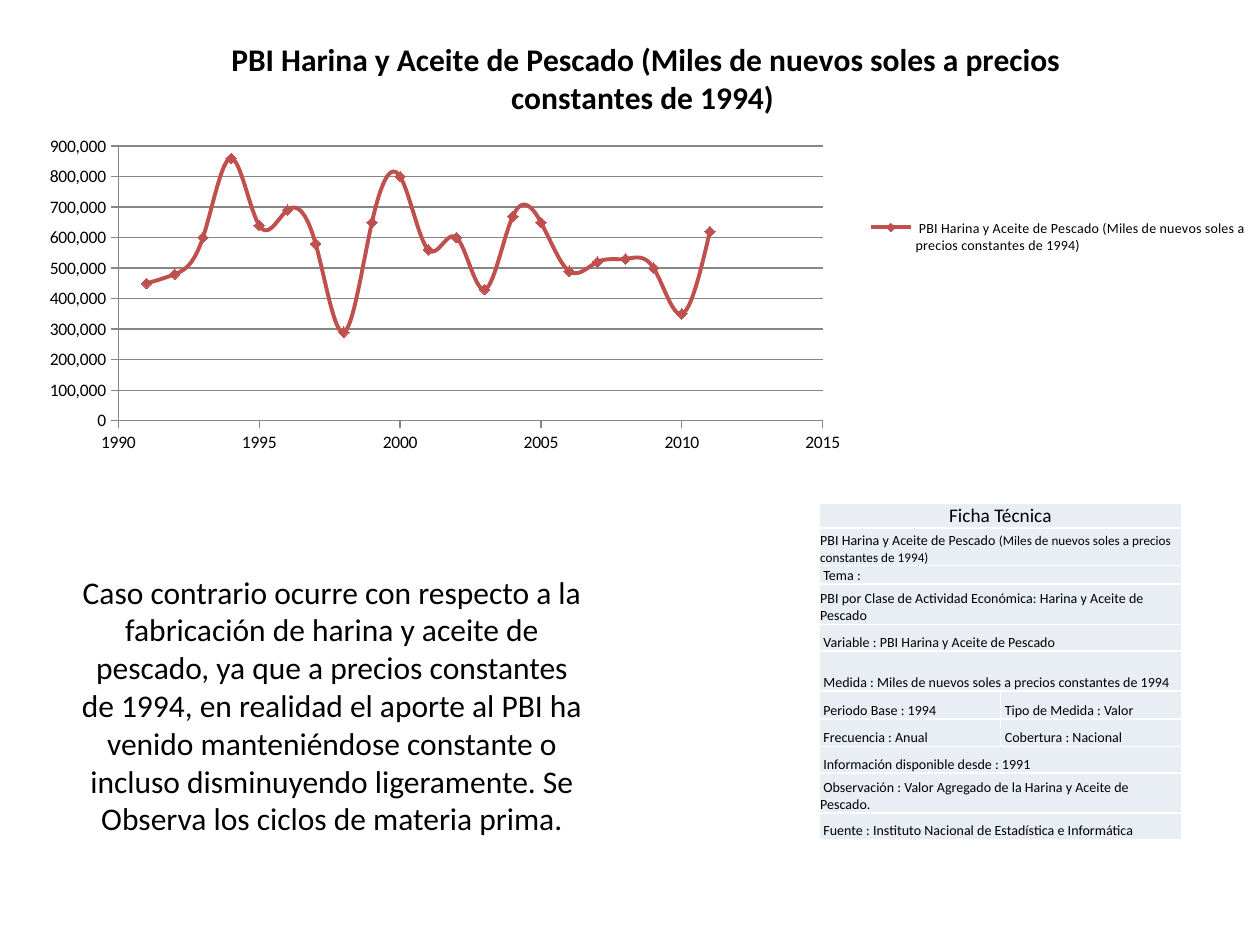
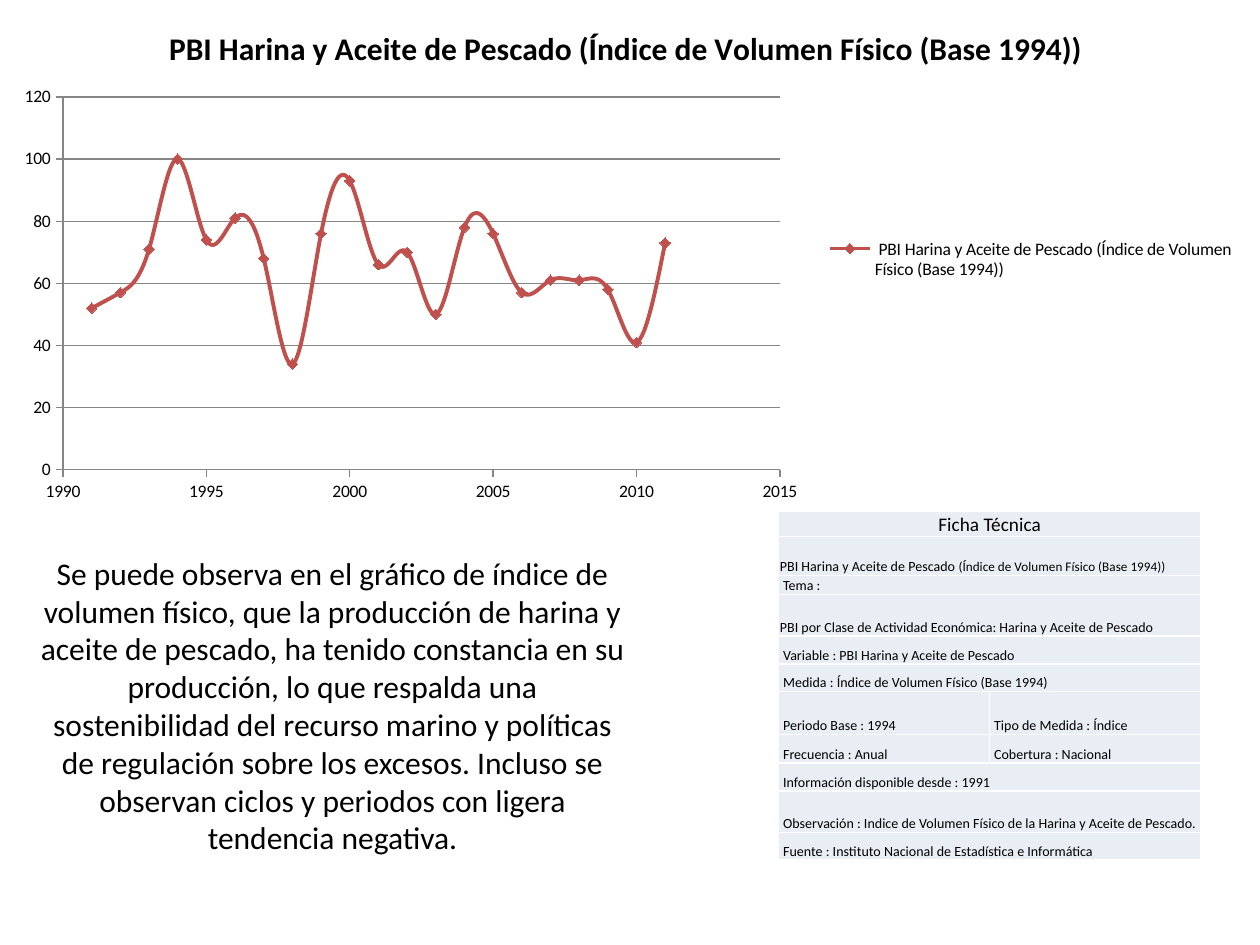
from collections import namedtuple
from lxml import etree
from pptx import Presentation
from pptx.chart.data import XyChartData
from pptx.dml.color import RGBColor
from pptx.enum.chart import XL_CHART_TYPE as ChartType
from pptx.enum.chart import XL_LEGEND_POSITION as LegendPosition
from pptx.enum.chart import XL_MARKER_STYLE as MarkerStyle
from pptx.enum.chart import XL_TICK_MARK as TickMark
from pptx.enum.text import MSO_ANCHOR as Anchor
from pptx.enum.text import MSO_AUTO_SIZE as AutoSize
from pptx.enum.text import PP_ALIGN as Align
from pptx.oxml.ns import qn
from pptx.util import Inches, Pt

COLORS = {"text": "000000", "line": "C0504D", "axis": "868686",
          "cell": "E9EDF4", "border": "FFFFFF"}
FONT = "Calibri"
TITLE_ONLY = 5
YEARS = range(1991, 2012)
PRODUCT = "PBI Harina y Aceite de Pescado"

Box = namedtuple("Box", "left top width height")


def rgb(name):
    return RGBColor.from_string(COLORS[name])


def inches(box):
    return [Inches(side) for side in box]


def style_font(font, size, bold=False):
    font.name = FONT
    font.size = Pt(size)
    font.bold = bold
    font.color.rgb = rgb("text")


def add_comment(page, box, text):
    title = page.shapes.title
    title.left, title.top, title.width, title.height = inches(box)
    frame = title.text_frame
    frame.text = text
    frame.word_wrap = True
    frame.auto_size = AutoSize.NONE
    frame.vertical_anchor = Anchor.MIDDLE
    para = frame.paragraphs[0]
    para.alignment = Align.CENTER
    style_font(para.runs[0].font, 18)


def set_layout(parent, chart_box, part, inner=False):
    for old in parent.findall(qn("c:layout")):
        parent.remove(old)
    layout = etree.Element(qn("c:layout"))
    manual = etree.SubElement(layout, qn("c:manualLayout"))
    settings = [("layoutTarget", "inner")] if inner else []
    settings += [("xMode", "edge"), ("yMode", "edge"),
                 ("x", (part.left - chart_box.left) / chart_box.width),
                 ("y", (part.top - chart_box.top) / chart_box.height),
                 ("w", part.width / chart_box.width),
                 ("h", part.height / chart_box.height)]
    for tag, value in settings:
        etree.SubElement(manual, qn(f"c:{tag}")).set("val", str(value))
    parent.insert(0 if inner else 1, layout)


def style_axis(axis, maximum, unit, number_format, minimum=0):
    axis.minimum_scale, axis.maximum_scale = minimum, maximum
    axis.major_unit = unit
    axis.major_tick_mark = TickMark.OUTSIDE
    axis.minor_tick_mark = TickMark.NONE
    axis.tick_labels.number_format = number_format
    axis.tick_labels.number_format_is_linked = False
    axis.format.line.color.rgb = rgb("axis")
    axis.format.line.width = Pt(0.75)


def add_trend_chart(page, box, name, values, plot, legend, legend_size, maximum, unit):
    data = XyChartData()
    points = data.add_series(name)
    for year, value in zip(YEARS, values, strict=True):
        points.add_data_point(year, value)
    chart = page.shapes.add_chart(ChartType.XY_SCATTER_SMOOTH, *inches(box), data).chart
    style_font(chart.font, 10)

    chart.has_title = True
    chart.chart_title.include_in_layout = False
    para = chart.chart_title.text_frame.paragraphs[0]
    para.text = name
    style_font(para.runs[0].font, 18, bold=True)

    style_axis(chart.category_axis, 2015, 5, "General", minimum=1990)
    style_axis(chart.value_axis, maximum, unit, "#,##0")
    chart.category_axis.has_major_gridlines = False
    chart.value_axis.has_major_gridlines = True
    grid = chart.value_axis.major_gridlines.format.line
    grid.color.rgb = rgb("axis")
    grid.width = Pt(0.75)

    chart.plots[0].vary_by_categories = False
    series = chart.plots[0].series[0]
    series.format.line.color.rgb = rgb("line")
    series.format.line.width = Pt(2.25)
    series.marker.style = MarkerStyle.DIAMOND
    series.marker.size = 6
    series.marker.format.fill.solid()
    series.marker.format.fill.fore_color.rgb = rgb("line")
    series.marker.format.line.color.rgb = rgb("line")
    for smooth in series._element.findall(qn("c:smooth")):
        smooth.set("val", "1")

    chart.has_legend = True
    chart.legend.position = LegendPosition.RIGHT
    chart.legend.include_in_layout = False
    style_font(chart.legend.font, legend_size)
    set_layout(chart._chartSpace.chart.plotArea, box, plot, inner=True)
    set_layout(chart.legend._element, box, legend)


def add_borders(cell):
    properties = cell._tc.get_or_add_tcPr()
    for index, side in enumerate(("lnL", "lnR", "lnT", "lnB")):
        line = etree.Element(qn(f"a:{side}"), w=str(Pt(1)))
        fill = etree.SubElement(line, qn("a:solidFill"))
        etree.SubElement(fill, qn("a:srgbClr"), val=COLORS["border"])
        properties.insert(index, line)


def format_cell(cell):
    cell.fill.solid()
    cell.fill.fore_color.rgb = rgb("cell")
    cell.vertical_anchor = Anchor.BOTTOM
    cell.margin_left = cell.margin_right = cell.margin_top = Inches(0.01)
    cell.margin_bottom = 0
    add_borders(cell)


def fill_cell(cell, spans, size):
    para = cell.text_frame.paragraphs[0]
    for index, text in enumerate(spans):
        span = para.add_run()
        span.text = text
        style_font(span.font, size if index == 0 else 7.5)
    return para


def add_data_sheet(page, box, heights, measure, kind, note):
    rows = [
        ["Ficha Técnica"],
        [(PRODUCT, f" ({measure})")],
        [" Tema : "],
        ["PBI por Clase de Actividad Económica: Harina y Aceite de Pescado"],
        [f" Variable : {PRODUCT}"],
        [f" Medida : {measure}"],
        [" Periodo Base : 1994", f" Tipo de Medida : {kind}"],
        [" Frecuencia : Anual", " Cobertura : Nacional"],
        [" Información disponible desde : 1991"],
        [f" Observación : {note} de la Harina y Aceite de Pescado."],
        [" Fuente : Instituto Nacional de Estadística e Informática"],
    ]
    table = page.shapes.add_table(len(rows), 2, *inches(box)).table
    table.first_row = table.horz_banding = False
    for column in table.columns:
        column.width = Inches(box.width / 2)
    for index, (texts, height) in enumerate(zip(rows, heights, strict=True)):
        table.rows[index].height = Inches(height)
        cells = [table.cell(index, column) for column in range(2)]
        for cell in cells:
            format_cell(cell)
        if len(texts) == 1:
            cells[0].merge(cells[1])
        for cell, text in zip(cells, texts):
            spans = text if isinstance(text, tuple) else (text,)
            para = fill_cell(cell, spans, 11 if index == 0 else 8)
            if index == 0:
                para.alignment = Align.CENTER


def add_indicator_page(deck, comment, chart, sheet):
    page = deck.slides.add_slide(deck.slide_layouts[TITLE_ONLY])
    add_comment(page, **comment)
    add_trend_chart(page, name=f" {PRODUCT} ({sheet['measure']})", **chart)
    add_data_sheet(page, **sheet)


def main():
    deck = Presentation()
    deck.slide_width, deck.slide_height = Inches(10), Inches(7.5)

    add_indicator_page(
        deck,
        comment={
            "box": Box(0.51, 4.22, 4.25, 2.75),
            "text": "Caso contrario ocurre con respecto a la fabricación de harina y "
                    "aceite de pescado, ya que a precios constantes de 1994, en realidad "
                    "el aporte al PBI ha venido manteniéndose constante o incluso "
                    "disminuyendo ligeramente. Se Observa los ciclos de materia prima.",
        },
        chart={
            "box": Box(0.2, 0.13, 9.8, 3.54),
            "values": [value * 1000 for value in (
                450, 480, 600, 860, 640, 690, 580, 290, 650, 800, 560,
                600, 430, 670, 650, 490, 520, 530, 500, 350, 620)],
            "plot": Box(0.94, 1.16, 5.59, 2.18),
            "legend": Box(6.85, 1.7, 3.1, 0.37),
            "legend_size": 8, "maximum": 900000, "unit": 100000,
        },
        sheet={
            "box": Box(6.5, 3.99, 2.88, 2.68),
            "heights": [0.14, 0.3, 0.14, 0.32, 0.21, 0.32, 0.22, 0.22, 0.21, 0.32, 0.21],
            "measure": "Miles de nuevos soles a precios constantes de 1994",
            "kind": "Valor", "note": "Valor Agregado",
        },
    )

    add_indicator_page(
        deck,
        comment={
            "box": Box(0.2, 4.3, 4.88, 2.59),
            "text": "Se puede observa en el gráfico de índice de volumen físico, que la "
                    "producción de harina y aceite de pescado, ha tenido constancia en su "
                    "producción, lo que respalda una sostenibilidad del recurso marino y "
                    "políticas de regulación sobre los excesos. Incluso se observan ciclos "
                    "y periodos con ligera tendencia negativa.",
        },
        chart={
            "box": Box(0, 0.03, 9.88, 4.03),
            "values": [52, 57, 71, 100, 74, 81, 68, 34, 76, 93, 66,
                       70, 50, 78, 76, 57, 61, 61, 58, 41, 73],
            "plot": Box(0.5, 0.77, 5.69, 2.96),
            "legend": Box(6.53, 1.85, 3.3, 0.42),
            "legend_size": 10, "maximum": 120, "unit": 20,
        },
        sheet={
            "box": Box(6.18, 4.06, 3.35, 2.76),
            "heights": [0.15, 0.31, 0.15, 0.33, 0.22, 0.22, 0.34, 0.23, 0.22, 0.33, 0.22],
            "measure": "Índice de Volumen Físico (Base 1994)",
            "kind": "Índice", "note": "Indice de Volumen Físico",
        },
    )
    deck.save("out.pptx")


if __name__ == "__main__":
    main()
